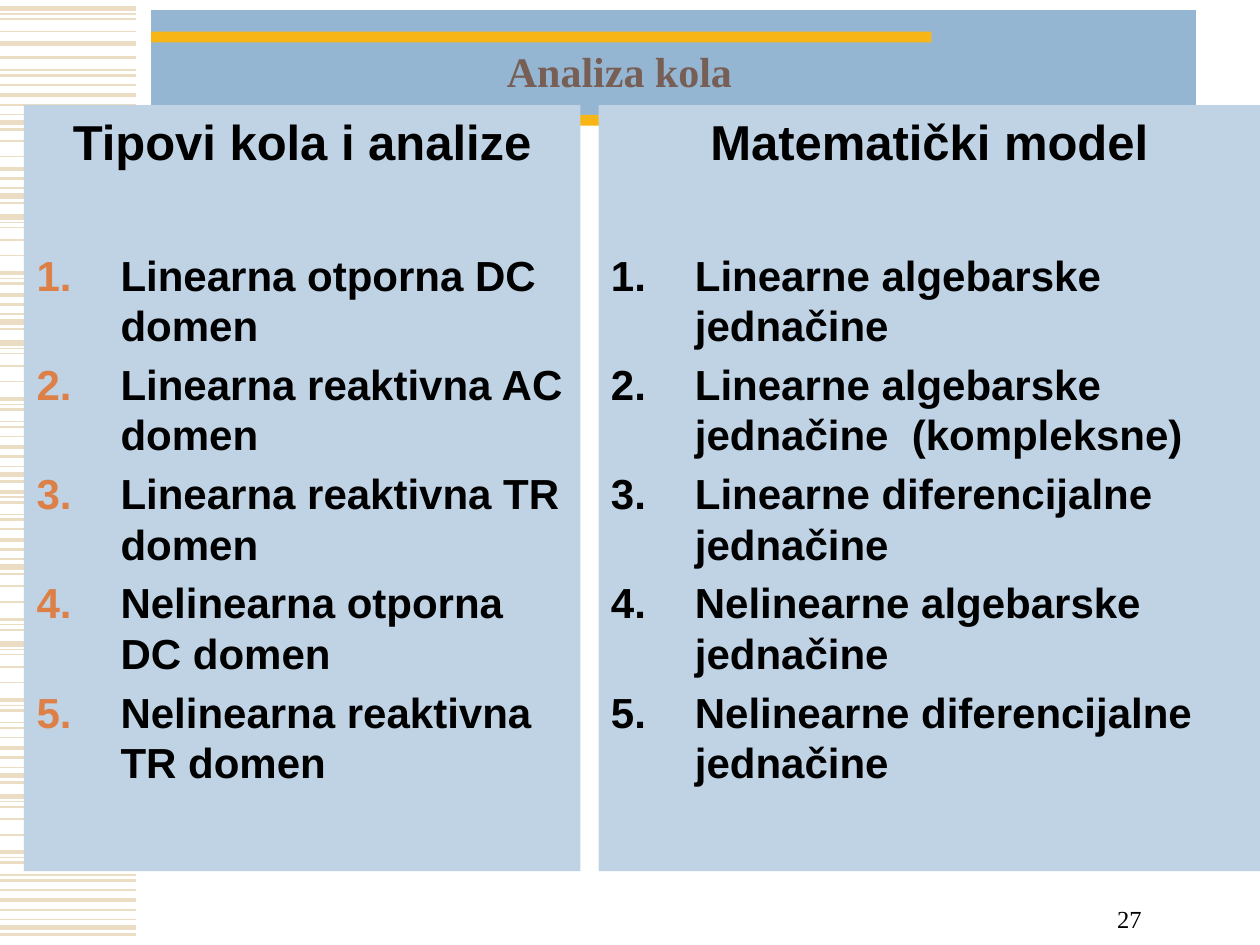
from lxml import etree
from pptx import Presentation
from pptx.dml.color import RGBColor
from pptx.enum.shapes import MSO_CONNECTOR, MSO_SHAPE
from pptx.enum.text import MSO_ANCHOR, MSO_AUTO_SIZE, PP_ALIGN
from pptx.oxml.ns import qn
from pptx.util import Pt

RECT, LINE = MSO_SHAPE.RECTANGLE, MSO_CONNECTOR.STRAIGHT
LEFT, CENTER, RIGHT = PP_ALIGN.LEFT, PP_ALIGN.CENTER, PP_ALIGN.RIGHT
TOP, MIDDLE, BOTTOM = MSO_ANCHOR.TOP, MSO_ANCHOR.MIDDLE, MSO_ANCHOR.BOTTOM
SANS, SERIF = "Arial", "Times New Roman"
BLACK, PANEL, BLUE, GOLD = "000000", "BFD3E4", "94B6D2", "F7B615"
SAND, BROWN, ORANGE = "EBDDC3", "775F55", "DD8047"

# Content
TITLE = "Analiza kola"
PAGE = "27"
CIRCUITS = ("Tipovi kola i analize", [
    "Linearna otporna DC domen",
    "Linearna reaktivna AC domen",
    "Linearna reaktivna TR domen",
    "Nelinearna otporna DC domen",
    "Nelinearna reaktivna TR domen",
])
MODELS = ("Matematički model", [
    "Linearne algebarske jednačine",
    "Linearne algebarske jednačine  (kompleksne)",
    "Linearne diferencijalne jednačine",
    "Nelinearne algebarske jednačine",
    "Nelinearne diferencijalne jednačine",
])
BARS = [  # left, top, width, height, colour
    (86.4, 5.8, 597, 64, BLUE),
    (237.6, 65.6, 445.8, 6.2, GOLD),
    (86.4, 18, 445.8, 6.2, GOLD),
]

# Stripe pattern: (offset, weight); runs: (start, first stripe, end stripe)
PATTERN = [(0, 3), (3, 0.75), (6, 1), (13, 1), (22, 1), (32, 2.25), (35, 0.75),
           (38, 1.5), (45, 0.75), (48, 1.5), (53.5, 1), (59.5, 2.25),
           (65, 1.5), (70.5, 0.75), (75, 3), (79, 1.5)]
RUNS = [(5, 0, 4), (25, 0, 1), (-5, 7, 16), (67.5, 3, 5), (37, 11, 16),
        (124, 0, 8), (109, 11, 16), (196, 0, 16), (249, 5, 16),
        (322, 3, 8), (368, 0, 16), (455, 0, 16)]
STRIPE_W = 78


def rgb(code):
    return RGBColor.from_string(code)


def place(sp, left, top, width, height):
    sp.left, sp.top, sp.width, sp.height = map(Pt, (left, top, width, height))


def frame(sp, anchor):
    tf = sp.text_frame
    tf.word_wrap, tf.auto_size = True, MSO_AUTO_SIZE.NONE
    tf.vertical_anchor = anchor
    tf.margin_left = tf.margin_right = Pt(7.2)
    tf.margin_top = tf.margin_bottom = Pt(3.6)
    return tf


def write(p, text, size, font, color, align, bold=True):
    p.alignment = align
    r = p.add_run()
    r.text = text
    r.font.size, r.font.name, r.font.bold = Pt(size), font, bold
    r.font.color.rgb = rgb(color)


def number(p, color):
    pPr = p._p.get_or_add_pPr()
    pPr.set("marL", str(Pt(48)))
    pPr.set("indent", str(-Pt(48)))
    clr = etree.SubElement(pPr, qn("a:buClr"))
    etree.SubElement(clr, qn("a:srgbClr"), val=color)
    etree.SubElement(pPr, qn("a:buFont"), typeface=SANS)
    etree.SubElement(pPr, qn("a:buAutoNum"), type="arabicPeriod")


def fill_panel(sp, content, number_color):
    heading, items = content
    sp.fill.solid()
    sp.fill.fore_color.rgb = rgb(PANEL)
    tf = frame(sp, TOP)
    p = tf.paragraphs[0]
    write(p, heading, 28, SANS, BLACK, CENTER)
    p.line_spacing, p.space_before, p.space_after = Pt(33.6), Pt(0), Pt(40.5)
    pPr = p._p.get_or_add_pPr()
    pPr.set("marL", "0")
    pPr.set("indent", "0")
    for item in items:
        p = tf.add_paragraph()
        write(p, item, 24, SANS, BLACK, LEFT)
        p.line_spacing, p.space_before, p.space_after = Pt(28.8), Pt(4.8), Pt(0)
        number(p, number_color)


prs = Presentation()
prs.slide_width, prs.slide_height = Pt(720), Pt(540)
s = prs.slides.add_slide(prs.slide_layouts[0])
shapes = s.shapes
title, body = s.placeholders[0], s.placeholders[1]

# Header bars
for left, top, width, height, color in BARS:
    sp = shapes.add_shape(RECT, Pt(left), Pt(top), Pt(width), Pt(height))
    sp.shadow.inherit = False
    sp.fill.solid()
    sp.fill.fore_color.rgb = rgb(color)
    sp.line.fill.background()

# Side stripes
for start, first, end in RUNS:
    for offset, weight in PATTERN[first:end]:
        y = Pt(start + offset)
        ln = shapes.add_connector(LINE, 0, y, Pt(STRIPE_W), y)
        ln.line.color.rgb = rgb(SAND)
        ln.line.width = Pt(weight)
        etree.SubElement(ln._element.spPr, qn("a:effectLst"))

# Page number
sp = shapes.add_textbox(Pt(509), Pt(501), Pt(150.5), Pt(36))
write(frame(sp, BOTTOM).paragraphs[0], PAGE, 14, SERIF, BLACK, RIGHT, False)

# Title and left panel, brought in front of the decoration
for sp in (title, body):
    shapes._spTree.append(sp._element)
place(title, 48, 24.5, 612, 36)
p = frame(title, MIDDLE).paragraphs[0]
write(p, TITLE, 24, SERIF, BROWN, CENTER)
p.line_spacing = 0.85
place(body, 13.7, 60, 318, 437.8)
fill_panel(body, CIRCUITS, ORANGE)

# Right panel
sp = shapes.add_textbox(Pt(342), Pt(60), Pt(378), Pt(437.8))
fill_panel(sp, MODELS, BLACK)

prs.save("out.pptx")
